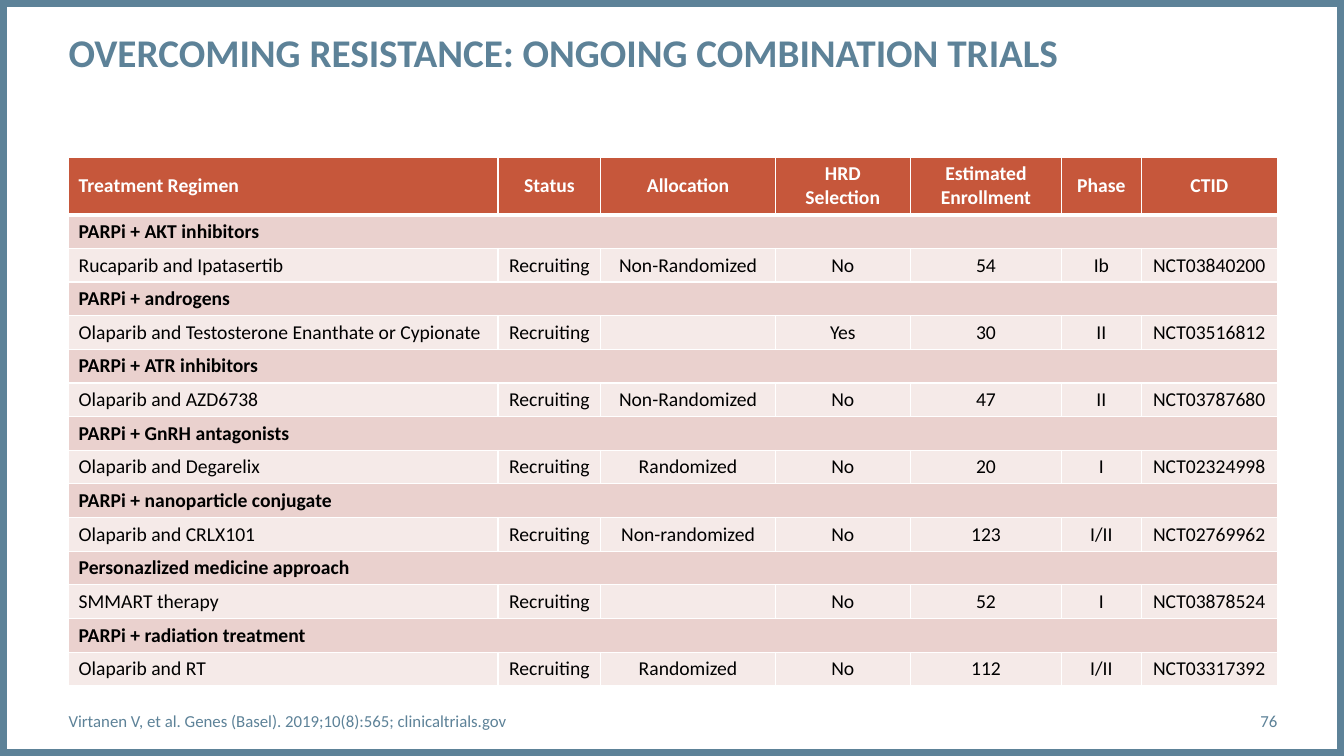
from lxml.etree import SubElement
from pptx import Presentation
from pptx.dml.color import RGBColor
from pptx.enum.shapes import MSO_SHAPE
from pptx.enum.text import MSO_ANCHOR as ANCHOR, PP_ALIGN as ALIGN
from pptx.oxml.ns import qn
from pptx.util import Inches, Pt

SLATE = RGBColor(0x5D, 0x82, 0x98)
RUST = RGBColor(0xC6, 0x57, 0x3B)
ROSE = RGBColor(0xEA, 0xD1, 0xCE)
BLUSH = RGBColor(0xF5, 0xEA, 0xE8)
WHITE = RGBColor(0xFF, 0xFF, 0xFF)
BLACK = RGBColor(0, 0, 0)
FONT = "Calibri"
TABLE_SIZE = 14

COL_WIDTHS = [4.26, 1.02, 1.73, 1.34, 1.5, 0.79, 1.35]
HEADER_HEIGHT, ROW_HEIGHT = 0.57, 0.33
HEADERS = ["Treatment Regimen", "Status", "Allocation", "HRD Selection",
           "Estimated Enrollment", "Phase", "CTID"]
# Group heading, regimen, allocation, HRD selection, enrollment, phase, CTID
TRIALS = [
    ("PARPi + AKT inhibitors", "Rucaparib and Ipatasertib",
     "Non-Randomized", "No", "54", "Ib", "NCT03840200"),
    ("PARPi + androgens", "Olaparib and Testosterone Enanthate or Cypionate",
     "", "Yes", "30", "II", "NCT03516812"),
    ("PARPi + ATR inhibitors", "Olaparib and AZD6738",
     "Non-Randomized", "No", "47", "II", "NCT03787680"),
    ("PARPi + GnRH antagonists", "Olaparib and Degarelix",
     "Randomized", "No", "20", "I", "NCT02324998"),
    ("PARPi + nanoparticle conjugate", "Olaparib and CRLX101",
     "Non-randomized", "No", "123", "I/II", "NCT02769962"),
    ("Personazlized medicine approach", "SMMART therapy",
     "", "No", "52", "I", "NCT03878524"),
    ("PARPi + radiation treatment", "Olaparib and RT",
     "Randomized", "No", "112", "I/II", "NCT03317392"),
]


def style_paragraph(p, size, color, bold=False, align=ALIGN.LEFT):
    p.alignment = align
    p.font.name = FONT
    p.font.size = Pt(size)
    p.font.bold = bold
    p.font.color.rgb = color


def add_text(s, text, x, y, w, h, size, bold=False, align=ALIGN.LEFT,
             anchor=ANCHOR.MIDDLE):
    tf = s.shapes.add_textbox(Inches(x), Inches(y), Inches(w), Inches(h)).text_frame
    tf.margin_left = tf.margin_right = tf.margin_top = tf.margin_bottom = 0
    tf.word_wrap = True
    tf.vertical_anchor = anchor
    p = tf.paragraphs[0]
    p.text = text
    style_paragraph(p, size, SLATE, bold, align)


def add_frame(s, w, h):
    sp = s.shapes.add_shape(MSO_SHAPE.RECTANGLE, 0, 0, w, h)
    sp.shadow.inherit = False
    sp.fill.background()
    sp.line.color.rgb = SLATE
    sp.line.width = Pt(10)


def set_borders(cell, top, bottom):
    tc_pr = cell._tc.get_or_add_tcPr()
    for side, width in (("L", 1), ("R", 1), ("T", top), ("B", bottom)):
        ln = SubElement(tc_pr, qn(f"a:ln{side}"), w=str(Pt(width)))
        fill = SubElement(ln, qn("a:solidFill"))
        SubElement(fill, qn("a:srgbClr"), val=str(WHITE))


def fill_row(table, row, texts, fill, color, bold):
    for col, text in enumerate(texts):
        cell = table.cell(row, col)
        set_borders(cell, 3 if row == 1 else 1, 3 if row == 0 else 1)
        cell.fill.solid()
        cell.fill.fore_color.rgb = fill
        cell.vertical_anchor = ANCHOR.MIDDLE
        p = cell.text_frame.paragraphs[0]
        p.text = text
        style_paragraph(p, TABLE_SIZE, color, bold,
                        ALIGN.CENTER if col else ALIGN.LEFT)
        if not text:  # keeps empty cells from stretching the row
            p._p.get_or_add_endParaRPr().set("sz", str(TABLE_SIZE * 100))


def add_trials_table(s, x, y):
    n_rows, n_cols = 1 + 2 * len(TRIALS), len(HEADERS)
    height = HEADER_HEIGHT + ROW_HEIGHT * (n_rows - 1)
    table = s.shapes.add_table(n_rows, n_cols, Inches(x), Inches(y),
                               Inches(sum(COL_WIDTHS)), Inches(height)).table
    table.horz_banding = False
    for column, width in zip(table.columns, COL_WIDTHS):
        column.width = Inches(width)
    for i, row in enumerate(table.rows):
        row.height = Inches(ROW_HEIGHT if i else HEADER_HEIGHT)

    fill_row(table, 0, HEADERS, RUST, WHITE, True)
    for i, (group, regimen, *details) in enumerate(TRIALS):
        row = 1 + 2 * i
        # Group heading across the full width, then its trial
        fill_row(table, row, [group] + [""] * (n_cols - 1), ROSE, BLACK, True)
        table.cell(row, 0).merge(table.cell(row, n_cols - 1))
        fill_row(table, row + 1, [regimen, "Recruiting", *details],
                 BLUSH, BLACK, False)


def add_footer(s, x, y, w, h):
    number_w = 1.17
    add_text(s, "76", x + w - number_w, y, number_w, h, 12, align=ALIGN.RIGHT)
    add_text(s, "Virtanen V, et al. Genes (Basel). 2019;10(8):565; clinicaltrials.gov",
             x, y, 8.88, h, 12)


def main():
    prs = Presentation()
    prs.slide_width, prs.slide_height = Inches(13.33), Inches(7.5)
    s = prs.slides.add_slide(prs.slide_layouts[6])
    left = 0.68
    add_frame(s, prs.slide_width, prs.slide_height)
    add_text(s, "OVERCOMING RESISTANCE: ONGOING COMBINATION TRIALS",
             left, 0.28, 10.08, 0.94, 28, bold=True, anchor=ANCHOR.TOP)
    add_trials_table(s, left, 1.56)
    add_footer(s, left, 6.95, sum(COL_WIDTHS), 0.4)
    prs.save("out.pptx")


if __name__ == "__main__":
    main()
